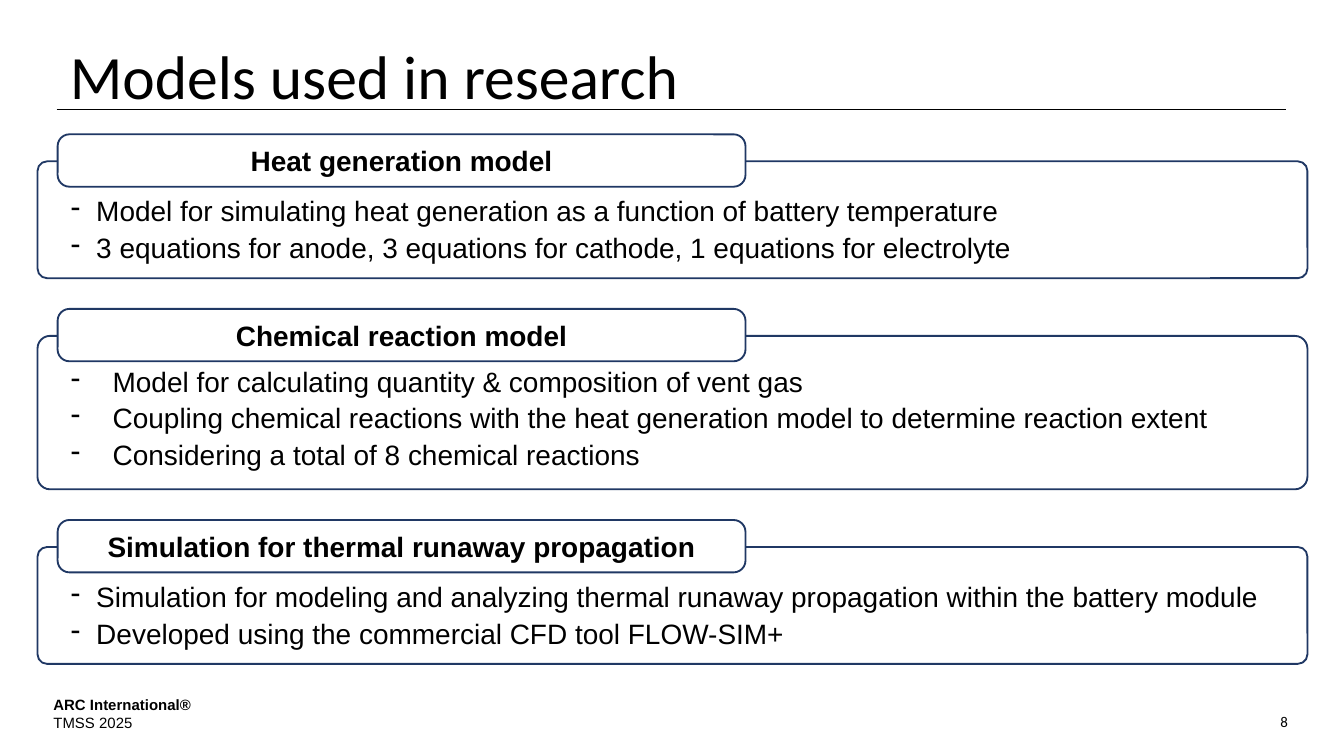
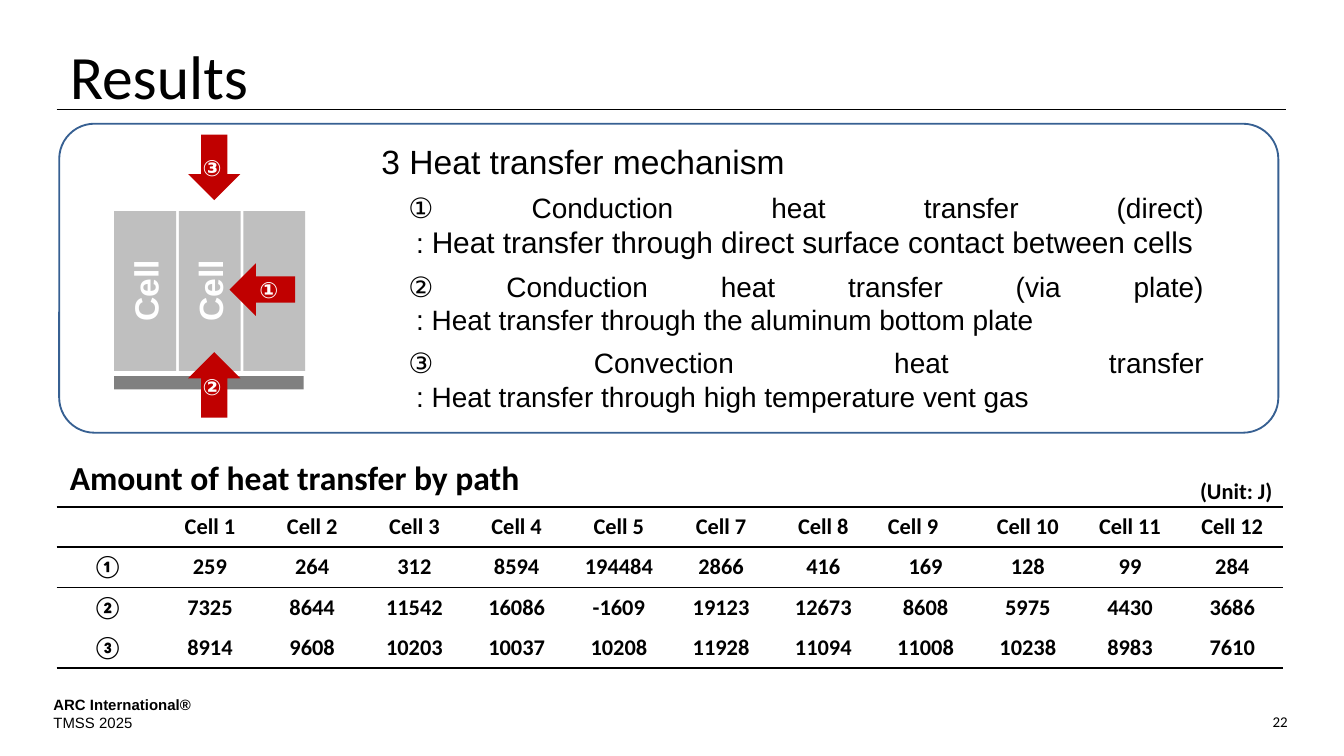
from lxml import etree
from pptx import Presentation
from pptx import util as u
from pptx.dml.color import RGBColor
from pptx.enum import shapes, text
from pptx.oxml.ns import qn

Cm, Pt = u.Cm, u.Pt
KIND, ALIGN = shapes.MSO_SHAPE, text.PP_ALIGN
BLACK, WHITE, NAVY, BLUE = "000000", "FFFFFF", "203864", "376092"
RED, SILVER, GREY = "C00000", "BFBFBF", "808080"
PLAIN_STYLE = "{2D5ABB26-0587-4C30-8999-92F81FD0307C}"
LABEL_SPACING = {"line_spacing": 1.5, "space_before": Pt(2.4)}
CENTRED = {"alignment": ALIGN.CENTER}

MODELS = [
    ("Heat generation model", 2.54, 2.21, 1.07, 0.48, [
        "Model for simulating heat generation as a function of battery temperature",
        "3 equations for anode, 3 equations for cathode, 1 equations for electrolyte"]),
    ("Chemical reaction model", 5.84, 2.9, 0.99, 0.79, [
        "Model for calculating quantity & composition of vent gas",
        "Coupling chemical reactions with the heat generation model to determine reaction extent",
        "Considering a total of 8 chemical reactions"]),
    ("Simulation for thermal runaway propagation", 9.83, 2.21, 1.07, 0.48, [
        "Simulation for modeling and analyzing thermal runaway propagation within the battery module",
        "Developed using the commercial CFD tool FLOW-SIM+"]),
]
MECHANISMS = [
    ("① Conduction heat transfer (direct)\n : ",
     "Heat transfer through direct surface contact between cells"),
    ("② Conduction heat transfer (via plate)\n : Heat transfer through the aluminum bottom plate", ""),
    ("③ Convection heat transfer\n : Heat transfer through high temperature vent gas", ""),
]
HEAT_BY_PATH = [
    [""] + [f"Cell {n}" for n in (1, 2, 3, 4, 5, 7, 8, 9, 10, 11, 12)],
    ["①", 259, 264, 312, 8594, 194484, 2866, 416, 169, 128, 99, 284],
    ["②", 7325, 8644, 11542, 16086, -1609, 19123, 12673, 8608, 5975, 4430, 3686],
    ["③", 8914, 9608, 10203, 10037, 10208, 11928, 11094, 11008, 10238, 8983, 7610],
]


def rgb(code):
    """Turn a hex string into a colour."""
    return RGBColor.from_string(code)


def apply(target, values):
    """Set each attribute of the target from a dict."""
    for name, value in values.items():
        setattr(target, name, value)


def face(size, color=BLACK, name="Arial", bold=False):
    """Describe a font as a dict of format values."""
    return {"size": Pt(size), "name": name, "bold": bold, "color": color}


def add_run(paragraph, words, font):
    """Add words to a paragraph, with line breaks at newlines."""
    for number, line in enumerate(words.split("\n")):
        if number:
            paragraph.add_line_break()
        run = paragraph.add_run()
        run.text = line
        apply(run.font, {k: v for k, v in font.items() if k != "color"})
        run.font.color.rgb = rgb(font["color"])


def write(frame, words, font, layout=None):
    """Write one paragraph at the end of a text frame."""
    paragraph = frame.paragraphs[-1]
    if paragraph.runs:
        paragraph = frame.add_paragraph()
    apply(paragraph, layout or {})
    add_run(paragraph, words, font)
    return paragraph


def indent(paragraph, left, first=0, bullet=None):
    """Indent a paragraph and give it a bullet character if asked."""
    props = paragraph._p.get_or_add_pPr()
    props.set("marL", str(Cm(left)))
    props.set("indent", str(Cm(first)))
    if bullet:
        etree.SubElement(props, qn("a:buChar")).set("char", bullet)


def text_box(slide, left, top, width, height, wrap=False, grow=True):
    """Add a text box and return its frame."""
    frame = slide.shapes.add_textbox(Cm(left), Cm(top), Cm(width), Cm(height)).text_frame
    fit = text.MSO_AUTO_SIZE
    apply(frame, {"word_wrap": wrap,
                  "auto_size": fit.SHAPE_TO_FIT_TEXT if grow else fit.NONE})
    return frame


def block(slide, kind, left, top, width, height, fill=None, line=None, corner=None):
    """Add a preset shape with flat fill and outline."""
    shape = slide.shapes.add_shape(kind, Cm(left), Cm(top), Cm(width), Cm(height))
    shape.shadow.inherit = False
    if fill:
        shape.fill.solid()
        shape.fill.fore_color.rgb = rgb(fill)
    else:
        shape.fill.background()
    if line:
        shape.line.color.rgb = rgb(line)
        shape.line.width = Pt(1)
    else:
        shape.line.fill.background()
    if corner:
        shape.adjustments[0] = corner
    shape.text_frame.vertical_anchor = text.MSO_ANCHOR.MIDDLE
    return shape


def new_slide(deck, title, number):
    """Start a slide with its title, rule and footers."""
    slide = deck.slides.add_slide(deck.slide_layouts[6])
    rule = slide.shapes.add_connector(
        shapes.MSO_CONNECTOR.STRAIGHT, Cm(1.07), Cm(2.06), Cm(24.31), Cm(2.06))
    rule.line.color.rgb = rgb(BLACK)
    rule.line.width = Pt(0.5)
    etree.SubElement(rule._element.spPr, qn("a:effectLst"))
    footer = text_box(slide, 0.76, 13.03, 7.29, 0.94, wrap=True)
    write(footer, "ARC International®", face(8, bold=True))
    write(footer, "TMSS 2025", face(8))
    write(text_box(slide, 19.13, 13.34, 5.46, 0.61, wrap=True), number,
          face(8, name="Calibri"), {"alignment": ALIGN.RIGHT})
    write(text_box(slide, 1.07, 0.76, 23.24, 1.12, wrap=True, grow=False), title,
          face(33, name="Calibri"), {"line_spacing": 0.9})
    return slide


def model_panel(slide, heading, top, height, text_drop, hang, points):
    """Add an outlined panel with a heading tab and dashed points."""
    block(slide, KIND.ROUNDED_RECTANGLE, 0.71, top + 0.51, 24, height,
          line=NAVY, corner=0.082)
    tab = block(slide, KIND.ROUNDED_RECTANGLE, 1.09, top, 13, 0.99,
                fill=WHITE, line=NAVY, corner=0.226)
    write(tab.text_frame, heading, face(15, bold=True), CENTRED)
    width = 22.25 if len(points) > 2 else 18.49 if top < 5 else 23.09
    frame = text_box(slide, 1.09, top + text_drop, width, 0.75 * len(points))
    for point in points:
        paragraph = write(frame, point, face(15),
                          {"line_spacing": 0.9, "space_before": Pt(3.5)})
        indent(paragraph, hang, -hang, "-")


def battery_cell(slide, left, name):
    """Add one battery cell with its name written upwards."""
    cell = block(slide, KIND.RECTANGLE, left, 3.99, 1.17, 3.02, fill=SILVER)
    if name:
        cell.text_frame._txBody.bodyPr.set("vert", "vert270")
        write(cell.text_frame, name, face(18, WHITE, bold=True), CENTRED)


def plate_arrow(slide, top, rotation, label_top, label):
    """Add a vertical heat arrow with its number."""
    block(slide, KIND.RIGHT_ARROW, 3.43, top, 1.24, 0.99, fill=RED).rotation = rotation
    write(text_box(slide, 3.58, label_top, 0.94, 0.94), label,
          face(12, WHITE, bold=True), LABEL_SPACING)


def heat_diagram(slide):
    """Draw the cells, the plate and the three heat paths."""
    for place, name in enumerate(("Cell", "Cell", "")):
        battery_cell(slide, 2.16 + 1.22 * place, name)
    block(slide, KIND.RECTANGLE, 2.16, 7.11, 3.58, 0.25, fill=GREY)
    plate_arrow(slide, 2.67, 90, 2.54, "③")
    plate_arrow(slide, 6.78, 270, 6.68, "②")
    direct = block(slide, KIND.LEFT_ARROW, 4.34, 4.98, 1.24, 0.99, fill=RED)
    write(direct.text_frame, "①", face(12, WHITE, bold=True), CENTRED)


def mechanism_list(slide):
    """Write the list of heat transfer mechanisms."""
    frame = text_box(slide, 6.96, 2.54, 16.05, 5.46)
    justified = {"alignment": ALIGN.JUSTIFY, "space_after": Pt(5)}
    write(frame, "3 Heat transfer mechanism", face(18), justified)
    for name, detail in MECHANISMS:
        paragraph = write(frame, name, face(15), justified)
        indent(paragraph, 0.51)
        if detail:
            add_run(paragraph, detail, face(16))


def rule_cell(cell, edges):
    """Draw black lines on the named edges of a cell."""
    for edge in edges:
        line = etree.Element(qn(f"a:{edge}"), w=str(Pt(1)))
        fill = etree.SubElement(line, qn("a:solidFill"))
        etree.SubElement(fill, qn("a:srgbClr"), val=BLACK)
        cell._tc.get_or_add_tcPr().insert(0, line)


def heat_table(slide):
    """Add the table of heat by path and cell."""
    table = slide.shapes.add_table(len(HEAT_BY_PATH), len(HEAT_BY_PATH[0]),
                                   Cm(1.07), Cm(9.58), Cm(23.19), Cm(3.04)).table
    apply(table, {"first_row": False, "horz_banding": False})
    table._tbl.tblPr[0].text = PLAIN_STYLE
    edges = {0: ("lnB", "lnT"), 1: ("lnT",), len(HEAT_BY_PATH) - 1: ("lnB",)}
    for r, values in enumerate(HEAT_BY_PATH):
        for c, value in enumerate(values):
            cell = table.cell(r, c)
            apply(cell, {"margin_top": 0, "margin_bottom": 0,
                         "vertical_anchor": text.MSO_ANCHOR.MIDDLE})
            cell.fill.background()
            rule_cell(cell, edges.get(r, ()))
            if value != "":
                side = ALIGN.LEFT if value == "Cell 9" else ALIGN.CENTER
                write(cell.text_frame, str(value), face(12, name="Calibri", bold=True),
                      {"alignment": side})


def main():
    """Build both slides and save the deck."""
    deck = Presentation()
    apply(deck, {"slide_width": Cm(25.4), "slide_height": Cm(14.29)})

    models = new_slide(deck, "Models used in research", "8")
    for model in MODELS:
        model_panel(models, *model)

    results = new_slide(deck, "Results", "22")
    block(results, KIND.ROUNDED_RECTANGLE, 1.12, 2.34, 23.04, 5.84, line=BLUE, corner=0.114)
    heat_diagram(results)
    mechanism_list(results)
    write(text_box(results, 1.07, 8.13, 9.09, 1.3), "Amount of heat transfer by path",
          face(18, name="Calibri", bold=True), LABEL_SPACING)
    write(text_box(results, 22.43, 8.64, 1.9, 0.94), "(Unit: J)",
          face(12, name="Calibri", bold=True), LABEL_SPACING)
    heat_table(results)
    deck.save("out.pptx")


if __name__ == "__main__":
    main()
